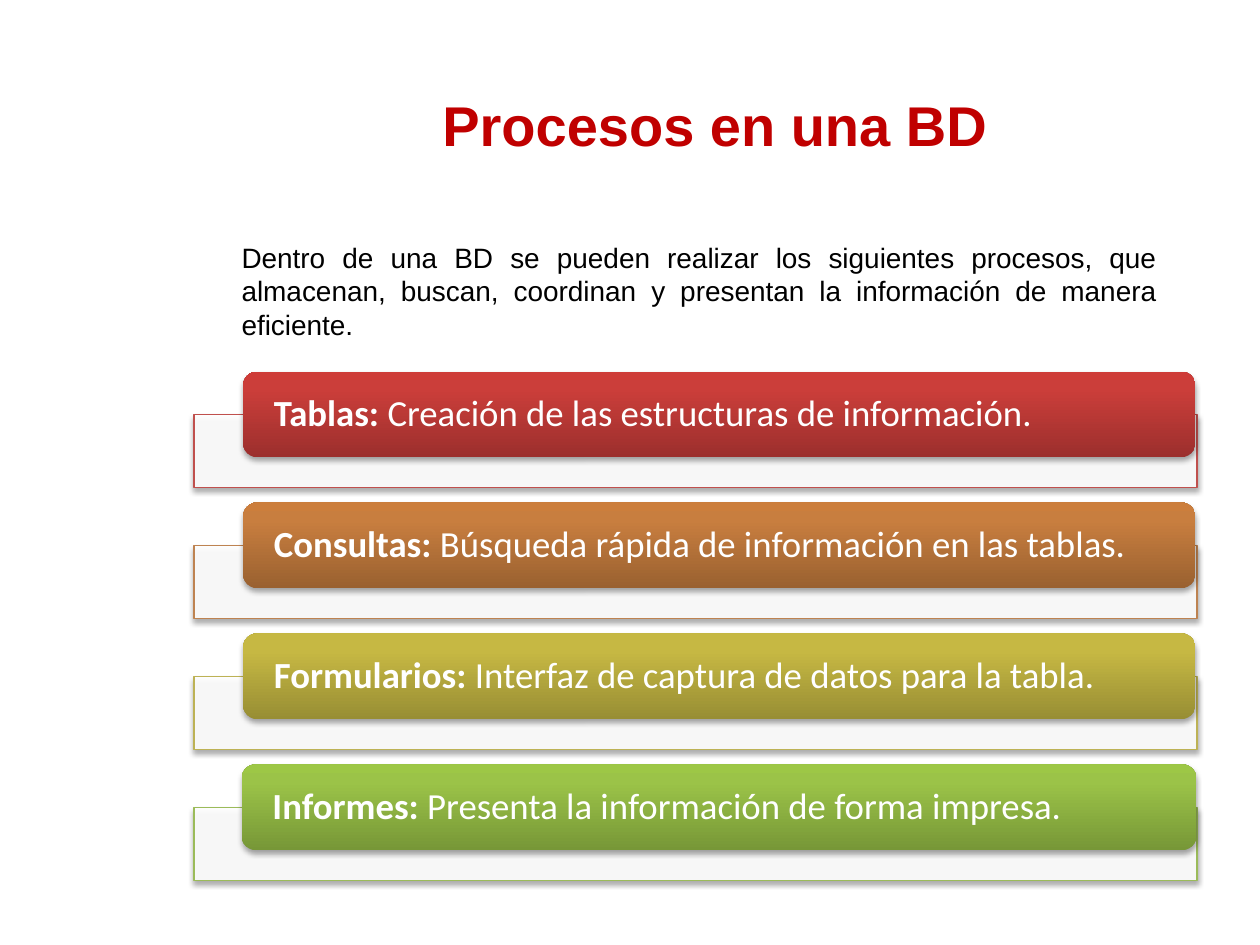
"""Build a slide that lists the processes of a database."""
import pptx
import pptx.dml.color
import pptx.enum.shapes
import pptx.enum.text
import pptx.oxml
import pptx.oxml.ns
import pptx.util

Cm = pptx.util.Cm
Pt = pptx.util.Pt
SHAPES = pptx.enum.shapes.MSO_SHAPE
ALIGN = pptx.enum.text.PP_ALIGN
ANCHOR = pptx.enum.text.MSO_ANCHOR

FIRST_TOP = 7.49
ROW_PITCH = 2.64
BAR_DROP = 0.87
PROCESSES = [
    ("Tablas: ", "Creación de las estructuras de información.",
     "C0504D", ("9C2F2D", "CB3E3A", "CE3B37"), 4.9, 19.2),
    ("Consultas: ", "Búsqueda rápida de información en las tablas.",
     "BE8351", ("9A6130", "C87E3F", "CC7E3C"), 4.9, 19.2),
    ("Formularios: ", "Interfaz de captura de datos para la tabla.",
     "BDB255", ("988E34", "C6B843", "C9BB41"), 4.9, 19.2),
    ("Informes: ", "Presenta la información de forma impresa.",
     "9BBB59", ("779737", "9BC348", "9DC746"), 4.87, 19.25),
]


def rgb(value):
    """Turn a hex string into a colour."""
    return pptx.dml.color.RGBColor.from_string(value)


def parse_xml(text):
    """Parse a drawing element, adding its namespace."""
    return pptx.oxml.parse_xml(text.replace(">", f' {pptx.oxml.ns.nsdecls("a")}>', 1))


def style_font(font, name, size, color, bold=False):
    """Set the look of a font."""
    font.name, font.size, font.bold = name, Pt(size), bold
    font.color.rgb = rgb(color)


def add_text(page, left, top, width, height, text, size, color, align, anchor, bold=False):
    """Add a wrapped text box with one Arial paragraph."""
    box = page.shapes.add_textbox(Cm(left), Cm(top), Cm(width), Cm(height))
    frame = box.text_frame
    frame.word_wrap = True
    frame.vertical_anchor = anchor
    frame.text = text
    para = frame.paragraphs[0]
    para.alignment = align
    style_font(para.runs[0].font, "Arial", size, color, bold)


def add_shadow(shape):
    """Give a shape a soft shadow below it."""
    shape.shadow.inherit = False
    effects = shape.element.spPr.find(pptx.oxml.ns.qn("a:effectLst"))
    effects.append(parse_xml(
        '<a:outerShdw blurRad="40000" dist="23000" dir="5400000" rotWithShape="0">'
        '<a:srgbClr val="000000"><a:alpha val="35000"/></a:srgbClr></a:outerShdw>'))


def add_bar(page, top, color):
    """Add the pale outlined bar behind a label."""
    bar = page.shapes.add_shape(SHAPES.RECTANGLE, Cm(3.91), Cm(top), Cm(20.22), Cm(1.47))
    bar.fill.solid()
    bar.fill.fore_color.rgb = rgb("FFFFFF")
    fill_color = bar.element.spPr.find(".//" + pptx.oxml.ns.qn("a:srgbClr"))
    fill_color.append(parse_xml('<a:alpha val="90000"></a:alpha>'))
    bar.line.color.rgb = rgb(color)
    bar.line.width = Pt(0.75)
    add_shadow(bar)


def fill_gradient(shape, colors):
    """Fill a shape with a three-colour gradient from bottom to top."""
    shape.fill.gradient()
    shape.fill.gradient_angle = 90
    stops = shape.element.spPr.find(".//" + pptx.oxml.ns.qn("a:gsLst"))
    for stop in list(stops):
        stops.remove(stop)
    for position, color in zip((0, 80, 100), colors):
        stops.append(parse_xml(
            f'<a:gs pos="{position * 1000}"><a:srgbClr val="{color}"/></a:gs>'))


def add_label(page, left, top, width, name, description, colors):
    """Add a rounded label with a bold name and its description."""
    label = page.shapes.add_shape(
        SHAPES.ROUNDED_RECTANGLE, Cm(left), Cm(top), Cm(width), Cm(1.73))
    fill_gradient(label, colors)
    label.line.fill.background()
    add_shadow(label)
    frame = label.text_frame
    frame.word_wrap = True
    frame.vertical_anchor = ANCHOR.MIDDLE
    frame.margin_left = frame.margin_right = Cm(0.54)
    frame.margin_top = frame.margin_bottom = 0
    para = frame.paragraphs[0]
    para.alignment = ALIGN.LEFT
    para.line_spacing = 0.9
    for text, bold in ((name, True), (description, False)):
        span = para.add_run()
        span.text = text
        style_font(span.font, "Calibri", 21, "FFFFFF", bold)


def main():
    """Build and save the deck."""
    deck = pptx.Presentation()
    deck.slide_width, deck.slide_height = Cm(25.4), Cm(19.05)
    page = deck.slides.add_slide(deck.slide_layouts[6])
    add_text(page, 4.7, 0.91, 19.43, 3.18, "Procesos en una BD",
             32, "C00000", ALIGN.CENTER, ANCHOR.MIDDLE, bold=True)
    for row, (name, description, line, colors, left, width) in enumerate(PROCESSES):
        top = FIRST_TOP + row * ROW_PITCH
        add_bar(page, top + BAR_DROP, line)
        add_label(page, left, top, width, name, description, colors)
    add_text(page, 4.62, 4.72, 18.95, 2.31,
             "Dentro de una BD se pueden realizar los siguientes procesos, que almacenan, "
             "buscan, coordinan y presentan la información de manera eficiente.",
             16, "000000", ALIGN.JUSTIFY, ANCHOR.TOP)
    deck.save("out.pptx")


if __name__ == "__main__":
    main()
